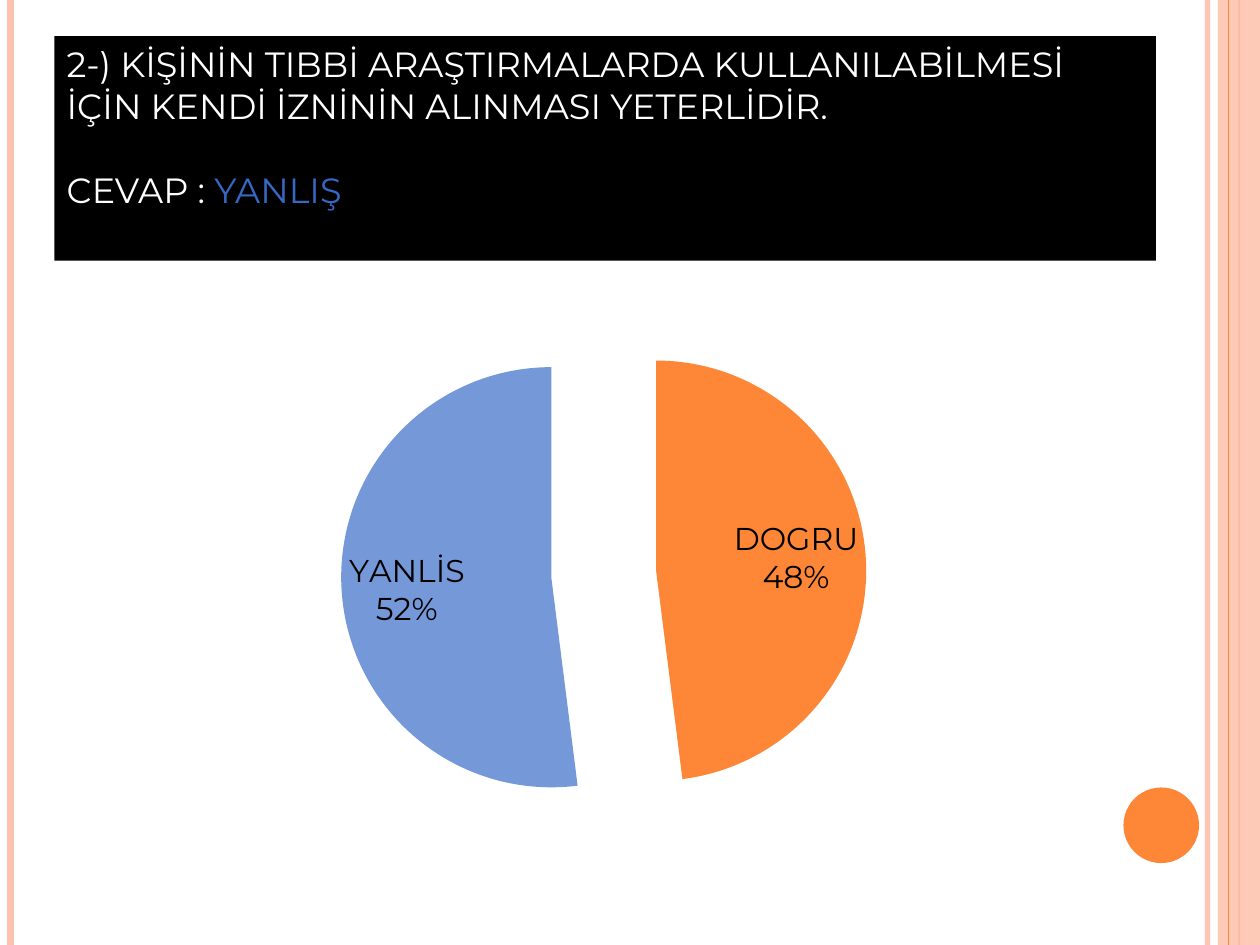
from lxml import etree
from pptx import Presentation
from pptx import util as u
from pptx.chart.data import CategoryChartData
from pptx.dml.color import RGBColor
from pptx.enum import chart as charts, shapes, text
from pptx.oxml import ns

WIDTH, HEIGHT = 720, 540
ORANGE, PEACH, BLUE = "FE8637", "FEC3AE", "7598D9"
BLACK, WHITE, ANSWER = "000000", "FFFFFF", "3668C4"


def rgb(value):
    return RGBColor.from_string(value)


def set_alpha(fill, percent):
    clr = fill._xPr.find(".//" + ns.qn("a:srgbClr"))
    etree.SubElement(clr, ns.qn("a:alpha")).set("val", str(percent * 1000))


class Deck:
    font = "Montserrat"

    def __init__(self):
        self.prs = Presentation()
        self.prs.slide_width, self.prs.slide_height = u.Pt(WIDTH), u.Pt(HEIGHT)
        self.s = self.prs.slides.add_slide(self.prs.slide_layouts[6])

    def stripe(self, x, color, width, alpha=100):
        sp = self.s.shapes.add_connector(
            shapes.MSO_CONNECTOR.STRAIGHT, u.Pt(x), 0, u.Pt(x), u.Pt(HEIGHT))
        sp.line.width = u.Pt(width)
        sp.line.color.rgb = rgb(color)
        if alpha < 100:
            set_alpha(sp.line.fill, alpha)
        etree.SubElement(sp._element.spPr, ns.qn("a:effectLst"))

    def shape(self, kind, box, color, alpha=100):
        sp = self.s.shapes.add_shape(kind, *map(u.Pt, box))
        sp.shadow.inherit = False
        sp.fill.solid()
        sp.fill.fore_color.rgb = rgb(color)
        if alpha < 100:
            set_alpha(sp.fill, alpha)
        sp.line.fill.background()
        return sp

    def panel(self, box, color, paragraphs, size, gap):
        tf = self.shape(shapes.MSO_SHAPE.RECTANGLE, box, color).text_frame
        tf.word_wrap = True
        tf.vertical_anchor = text.MSO_ANCHOR.TOP
        for i, runs in enumerate(paragraphs):
            p = tf.add_paragraph() if i else tf.paragraphs[0]
            p.alignment = text.PP_ALIGN.LEFT
            p.space_before = u.Pt(gap if i else 0)
            for words, run_color in runs:
                r = p.add_run()
                r.text = words
                r.font.name, r.font.size = self.font, u.Pt(size)
                r.font.color.rgb = rgb(run_color)

    def pie(self, box, slices, size, explosion):
        data = CategoryChartData()
        data.categories = [name for name, _, _ in slices]
        data.add_series("Series 1", [value for _, value, _ in slices])
        chart = self.s.shapes.add_chart(
            charts.XL_CHART_TYPE.PIE, *map(u.Pt, box), data).chart
        chart.has_legend = chart.has_title = False
        chart.font.name, chart.font.size = self.font, u.Pt(size)
        chart.font.color.rgb = rgb(BLACK)
        plot = chart.plots[0]
        plot.vary_by_categories = True
        series = plot.series[0]
        for i, (_, _, color) in enumerate(slices):
            fill = series.points[i].format.fill
            fill.solid()
            fill.fore_color.rgb = rgb(color)
        exploded = etree.Element(ns.qn("c:explosion"), val=str(explosion))
        series._element.find(ns.qn("c:dPt")).addprevious(exploded)
        for point in series._element.findall(ns.qn("c:dPt")):
            part = etree.Element(ns.qn("c:explosion"), val=str(explosion))
            point.find(ns.qn("c:spPr")).addprevious(part)
        plot.has_data_labels = True
        labels = plot.data_labels
        labels.show_value = False
        labels.show_category_name = labels.show_percentage = True
        labels.number_format, labels.number_format_is_linked = "0%", False
        labels.position = charts.XL_LABEL_POSITION.INSIDE_END
        labels.font.name, labels.font.size = self.font, u.Pt(size)
        labels.font.color.rgb = rgb(BLACK)
        separator = etree.SubElement(labels._element, ns.qn("c:separator"))
        separator.text = "\n"
        labels._element.find(ns.qn("c:showBubbleSize")).addnext(separator)


def main():
    deck = Deck()
    deck.stripe(690, PEACH, 3, 93)
    deck.stripe(6, PEACH, 4.5)
    deck.stripe(708, ORANGE, 1.5)
    deck.shape(shapes.MSO_SHAPE.RECTANGLE, (696, 0, 24, HEIGHT), PEACH, 87)
    deck.stripe(702, ORANGE, 0.75)
    deck.shape(shapes.MSO_SHAPE.OVAL, (642, 450, 43.2, 43.2), ORANGE)
    question = ("2-) KİŞİNİN TIBBİ ARAŞTIRMALARDA KULLANILABİLMESİ "
                "İÇİN KENDİ İZNİNİN ALINMASI YETERLİDİR.")
    deck.panel((31, 20.6, 629.5, 128.4), BLACK,
               [[(question, WHITE)], [("CEVAP : ", WHITE), ("YANLIŞ", ANSWER)]],
               size=20, gap=24)
    deck.pie((105, 168, 480, 320),
             [("DOGRU", 48, ORANGE), ("YANLİS", 52, BLUE)],
             size=18, explosion=25)
    deck.prs.save("out.pptx")


if __name__ == "__main__":
    main()
